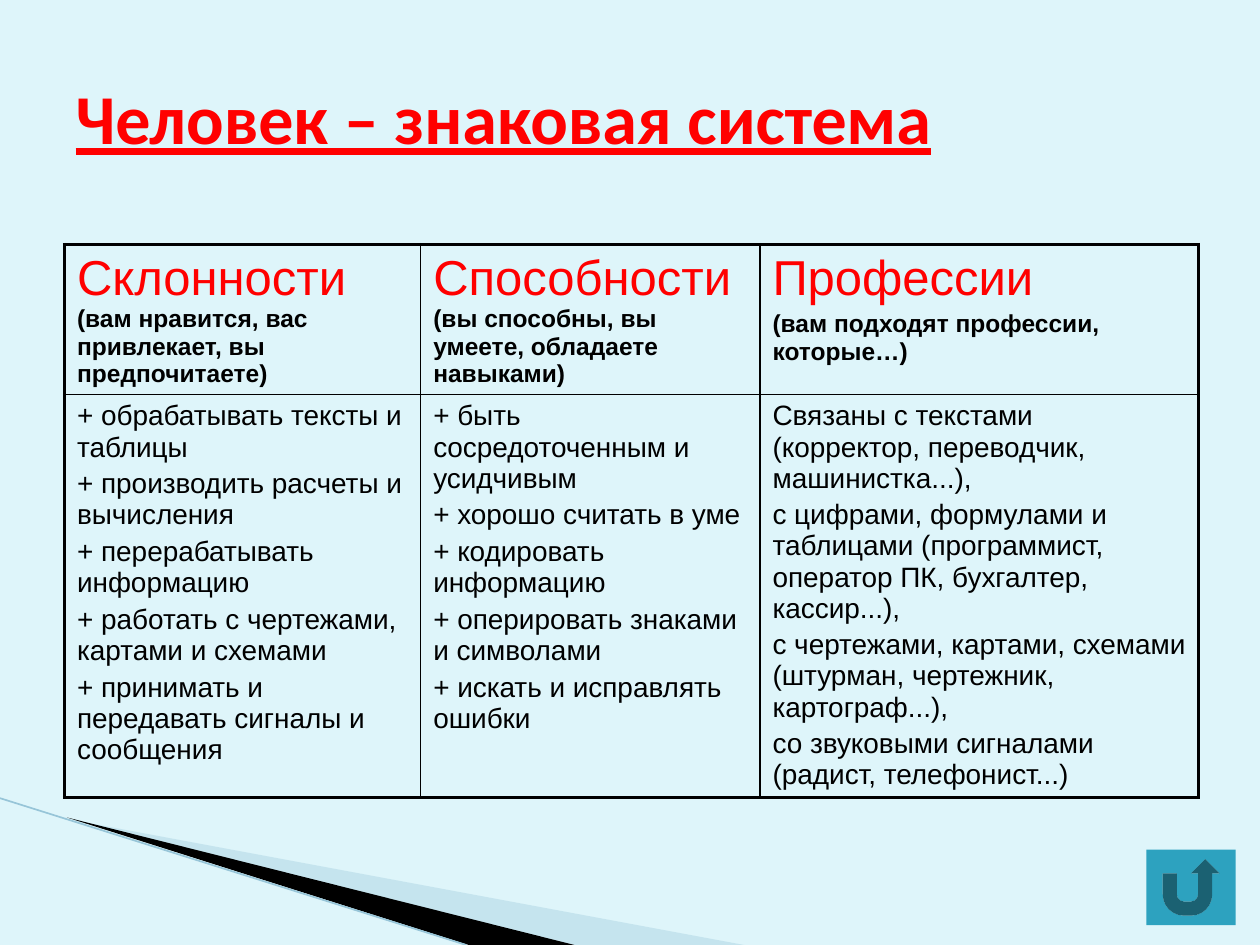
from pptx import Presentation
from pptx.dml.color import RGBColor
from pptx.enum.shapes import MSO_CONNECTOR, MSO_SHAPE
from pptx.enum.text import MSO_ANCHOR, PP_ALIGN
from pptx.oxml import parse_xml
from pptx.oxml.ns import nsdecls, qn
from pptx.util import Cm, Pt

STRAIGHT = MSO_CONNECTOR.STRAIGHT
RETURN = MSO_SHAPE.ACTION_BUTTON_RETURN
MIDDLE = MSO_ANCHOR.MIDDLE
LEFT = PP_ALIGN.LEFT

COLORS = {
    "back": "DEF5FA",
    "pale": "A0CBDC",
    "edge": "97C5D8",
    "button": "2DA2BF",
    "red": "FF0000",
    "black": "000000",
}

HEADS = [
    [[("Склонности ", 28), ("(вам нравится, вас привлекает, вы предпочитаете)", 14)]],
    [[("Способности ", 28), ("(вы способны, вы умеете, обладаете навыками)", 14)]],
    [[("Профессии", 28)], [("(вам подходят профессии, которые…)", 14)]],
]
LISTS = [
    [
        "+ обрабатывать тексты и таблицы",
        "+ производить расчеты и вычисления",
        "+ перерабатывать информацию",
        "+ работать с чертежами, картами и схемами",
        "+ принимать и передавать сигналы и сообщения",
    ],
    [
        "+ быть сосредоточенным и усидчивым",
        "+ хорошо считать в уме",
        "+ кодировать информацию",
        "+ оперировать знаками и символами",
        "+ искать и исправлять ошибки",
    ],
    [
        "Связаны с текстами (корректор, переводчик, машинистка...),",
        "с цифрами, формулами и таблицами (программист, оператор ПК, бухгалтер, кассир...),",
        "с чертежами, картами, схемами (штурман, чертежник, картограф...),",
        "со звуковыми сигналами (радист, телефонист...)",
    ],
]
BODY = [[[(text, 16)] for text in texts] for texts in LISTS]


def color(name):
    return RGBColor.from_string(COLORS[name])


class Deck:
    def __init__(self):
        self.file = Presentation()
        self.file.slide_width = Cm(25.4)
        self.file.slide_height = Cm(19.05)
        self.slide = self.file.slides.add_slide(self.file.slide_layouts[5])
        self.shapes = self.slide.shapes
        fill = self.slide.background.fill
        fill.solid()
        fill.fore_color.rgb = color("back")

    def style(self, font, size, tint, face="Arial", bold=False):
        font.name = face
        font.size = Pt(size)
        font.bold = bold
        font.color.rgb = color(tint)

    def paint(self, shape, tint):
        shape.shadow.inherit = False
        shape.fill.solid()
        shape.fill.fore_color.rgb = color(tint)
        shape.line.fill.background()

    def title(self, text, left, top, width, height):
        box = self.shapes.title
        box.left, box.top = Cm(left), Cm(top)
        box.width, box.height = Cm(width), Cm(height)
        frame = box.text_frame
        frame.text = text
        frame.vertical_anchor = MIDDLE
        line = frame.paragraphs[0]
        line.alignment = LEFT
        font = line.runs[0].font
        self.style(font, 40, "red", "Calibri", True)
        font.underline = True

    def wedge(self, points, tint, alpha=100):
        spots = [(Cm(x), Cm(y)) for x, y in points]
        form = self.shapes.build_freeform(*spots[0])
        form.add_line_segments(spots[1:])
        shape = form.convert_to_shape()
        self.paint(shape, tint)
        if alpha < 100:
            node = shape._element.spPr.find(".//" + qn("a:srgbClr"))
            node.append(parse_xml(f'<a:alpha {nsdecls("a")} val="{alpha * 1000}"/>'))

    def line(self, start, end, tint, width):
        ends = [Cm(v) for v in start + end]
        line = self.shapes.add_connector(STRAIGHT, *ends)
        line.line.color.rgb = color(tint)
        line.line.width = Pt(width)
        line._element.spPr.append(parse_xml(f'<a:effectLst {nsdecls("a")}/>'))

    def button(self, left, top, width, height):
        shape = self.shapes.add_shape(RETURN, Cm(left), Cm(top), Cm(width), Cm(height))
        self.paint(shape, "button")

    def border(self, cell, sides):
        props = cell._tc.get_or_add_tcPr()
        for spot, (side, width) in enumerate(sides.items()):
            props.insert(spot, parse_xml(
                f'<a:ln{side} {nsdecls("a")} w="{Pt(width)}"><a:solidFill>'
                f'<a:srgbClr val="{COLORS["black"]}"/></a:solidFill></a:ln{side}>'))

    def label(self, cell, lines):
        frame = cell.text_frame
        for spot, parts in enumerate(lines):
            line = frame.add_paragraph() if spot else frame.paragraphs[0]
            if spot:
                line.space_before = Pt(0.2 * parts[0][1])
            for text, size in parts:
                run = line.add_run()
                run.text = text
                self.style(run.font, size, "red" if size == 28 else "black", bold=size == 14)

    def table(self, left, top, cols, rows, data):
        frame = self.shapes.add_table(len(rows), len(cols), Cm(left), Cm(top),
                                      Cm(sum(cols)), Cm(sum(rows)))
        table = frame.table
        table.first_row = table.horz_banding = False
        for col, width in zip(table.columns, cols):
            col.width = Cm(width)
        for row, height in zip(table.rows, rows):
            row.height = Cm(height)
        for r, cells in enumerate(data):
            for c, lines in enumerate(cells):
                cell = table.cell(r, c)
                cell.fill.background()
                self.label(cell, lines)
                outer = {"L": c == 0, "R": c == len(cols) - 1,
                         "T": r == 0, "B": r == len(rows) - 1}
                self.border(cell, {side: 2.25 if out else 1 for side, out in outer.items()})


def main():
    deck = Deck()
    deck.wedge([(1.4, 16.52), (15, 19.05), (11.58, 19.05)], "pale", 40)
    deck.wedge([(1.35, 16.48), (11.58, 19.05), (9.45, 19.05)], "black")
    deck.line((0, 16.09), (9.4, 19.05), "edge", 0.95)
    deck.title("Человек – знаковая система", 1.27, 0.76, 22.86, 3.18)
    deck.table(1.3, 4.93, [7.18, 6.84, 8.84], [3.02, 8.13], [HEADS, BODY])
    deck.button(23.11, 17.13, 1.8, 1.52)
    deck.file.save("out.pptx")


if __name__ == "__main__":
    main()
